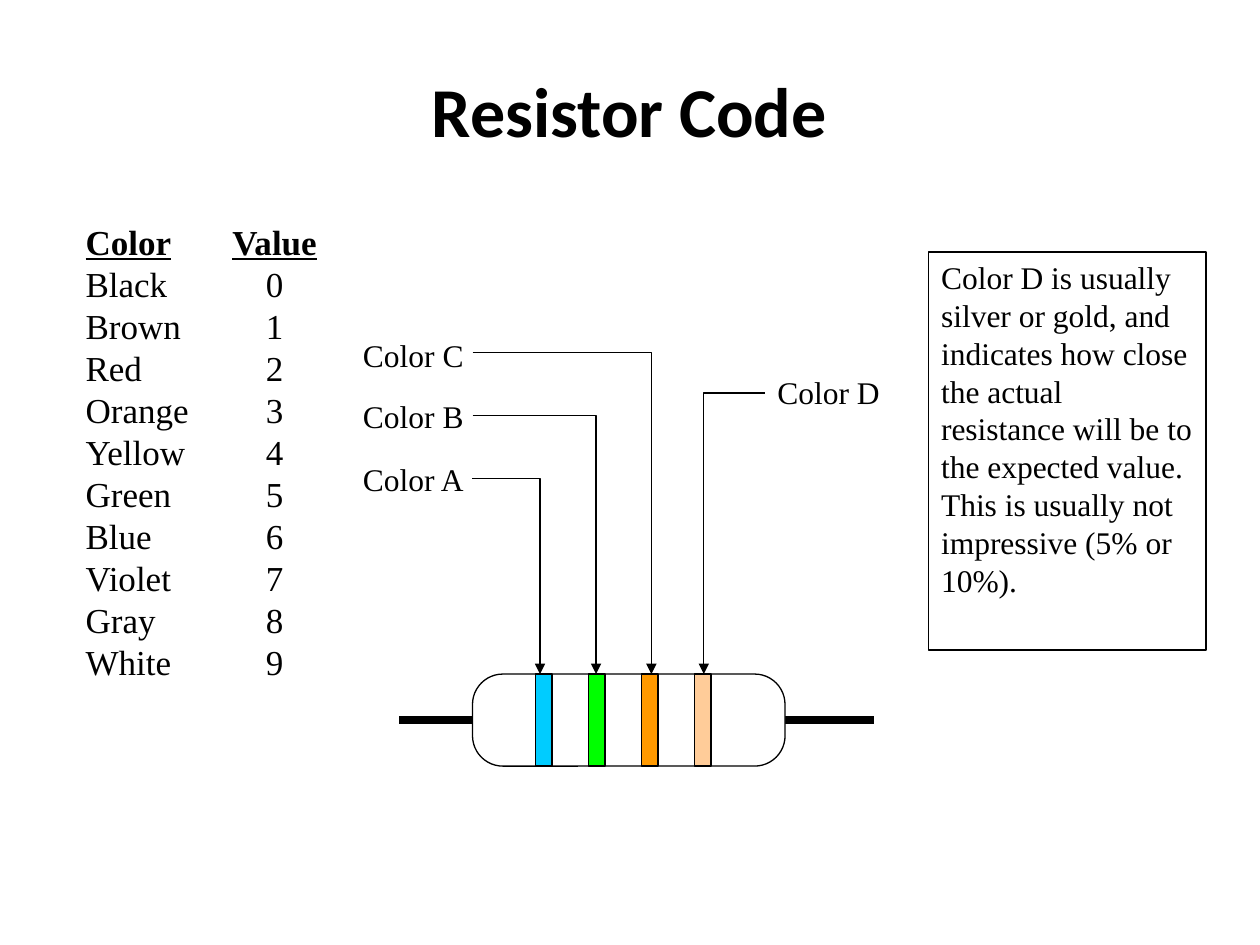
"""Build the resistor colour code slide."""
from lxml.etree import SubElement
from pptx import Presentation
from pptx.dml.color import RGBColor
from pptx.enum.shapes import MSO_CONNECTOR as Connector, MSO_SHAPE as Shape
from pptx.enum.text import MSO_ANCHOR as Anchor, MSO_AUTO_SIZE as AutoSize, PP_ALIGN as Align
from pptx.oxml.ns import qn
from pptx.util import Pt

THEME = {
    "ink": "000000", "paper": "FFFFFF",
    "title_font": "Calibri", "body_font": "Times New Roman",
    "title_size": 40, "table_size": 20, "label_size": 18,
    "thin": 0.75, "lead": 4.5,
}
TITLE = "Resistor Code"
HEADER = ("Color", "Value")
COLORS = ["Black", "Brown", "Red", "Orange", "Yellow",
          "Green", "Blue", "Violet", "Gray", "White"]
NOTE = ("Color D is usually silver or gold, and indicates how close the actual "
        "resistance will be to the expected value. This is usually not "
        "impressive (5% or 10%).")
BANDS = [
    {"label": "Color A", "fill": "00CCFF", "label_at": (207.4, 262.8), "start": (270, 273.6), "tip": 308.6},
    {"label": "Color B", "fill": "00FF00", "label_at": (207.4, 226.8), "start": (270, 237.6), "tip": 340.6},
    {"label": "Color C", "fill": "FF9900", "label_at": (207.4, 192.2), "start": (270, 201.6), "tip": 372.2},
    {"label": "Color D", "fill": "FFCC99", "label_at": (444.2, 213.1), "start": (437, 224.6), "tip": 402.2},
]
BODY_LEFT, BODY_TOP, BODY_WIDTH, BODY_HEIGHT = 270, 385.2, 178.6, 52.6
BAND_LEFT, BAND_STEP, BAND_WIDTH = 306, 30.3, 9.4
LEAD_LEFT, LEAD_RIGHT, LEAD_Y = 228.3, 499.7, 411.2
TAB_STOP = 108


def rgb(name):
    return RGBColor.from_string(THEME.get(name, name))


def add_span(para, text, size, font="body_font", bold=False, underline=False):
    span = para.add_run()
    span.text = text
    span.font.name = THEME[font]
    span.font.size = Pt(THEME[size])
    span.font.color.rgb = rgb("ink")
    span.font.bold = bold
    span.font.underline = underline


def set_line(shape, width="thin"):
    shape.line.color.rgb = rgb("ink")
    shape.line.width = Pt(THEME[width])


def add_block(slide, kind, left, top, width, height, fill="paper"):
    block = slide.shapes.add_shape(kind, Pt(left), Pt(top), Pt(width), Pt(height))
    block.shadow.inherit = False
    block.fill.solid()
    block.fill.fore_color.rgb = rgb(fill)
    set_line(block)
    return block


def add_box(slide, left, top, width, height):
    box = slide.shapes.add_textbox(Pt(left), Pt(top), Pt(width), Pt(height))
    box.text_frame.word_wrap = True
    return box.text_frame


def add_title(slide):
    title = slide.shapes.title
    title.left, title.top, title.width, title.height = Pt(212.4), Pt(34.6), Pt(294.5), Pt(55.4)
    frame = title.text_frame
    frame.auto_size = AutoSize.NONE
    frame.vertical_anchor = Anchor.MIDDLE
    para = frame.paragraphs[0]
    para.alignment = Align.CENTER
    add_span(para, TITLE, "title_size", "title_font", bold=True)


def add_code_list(slide):
    frame = add_box(slide, 41.8, 122.4, 159, 280)
    for index, row in enumerate([HEADER, *zip(COLORS, map(str, range(10)))]):
        para = frame.add_paragraph() if index else frame.paragraphs[0]
        stops = SubElement(para._p.get_or_add_pPr(), qn("a:tabLst"))
        SubElement(stops, qn("a:tab"), pos=str(Pt(TAB_STOP)), algn="ctr")
        heading = row is HEADER
        add_span(para, row[0], "table_size", bold=heading, underline=heading)
        add_span(para, "\t", "table_size")
        add_span(para, row[1], "table_size", bold=heading, underline=heading)


def add_resistor(slide):
    lead = slide.shapes.add_connector(
        Connector.STRAIGHT, Pt(LEAD_LEFT), Pt(LEAD_Y), Pt(LEAD_RIGHT), Pt(LEAD_Y))
    set_line(lead, "lead")
    SubElement(lead._element.spPr, qn("a:effectLst"))
    body = add_block(slide, Shape.ROUNDED_RECTANGLE, BODY_LEFT, BODY_TOP, BODY_WIDTH, BODY_HEIGHT)
    body.adjustments[0] = 0.33
    for index, band in enumerate(BANDS):
        add_block(slide, Shape.RECTANGLE, BAND_LEFT + index * BAND_STEP, BODY_TOP,
                  BAND_WIDTH, BODY_HEIGHT, band["fill"])


def add_pointer(slide, band):
    left, top = band["label_at"]
    frame = add_box(slide, left, top, 68, 22)
    frame.margin_left = frame.margin_top = frame.margin_right = frame.margin_bottom = 0
    add_span(frame.paragraphs[0], band["label"], "label_size")

    x, y = band["start"]
    builder = slide.shapes.build_freeform(Pt(x), Pt(y))
    corners = [(Pt(band["tip"]), Pt(y)), (Pt(band["tip"]), Pt(BODY_TOP))]
    builder.add_line_segments(corners, close=False)
    arrow = builder.convert_to_shape()
    arrow.shadow.inherit = False
    arrow.fill.background()
    set_line(arrow)
    SubElement(arrow.line._get_or_add_ln(), qn("a:tailEnd"), type="triangle", w="med", len="med")


def add_note(slide):
    note = add_block(slide, Shape.RECTANGLE, 530.7, 144, 158.5, 227.5)
    frame = note.text_frame
    frame.word_wrap = True
    frame.vertical_anchor = Anchor.TOP
    para = frame.paragraphs[0]
    para.alignment = Align.LEFT
    add_span(para, NOTE, "label_size")


def main():
    deck = Presentation()
    deck.slide_width, deck.slide_height = Pt(720), Pt(540)
    slide = deck.slides.add_slide(deck.slide_layouts[5])
    add_title(slide)
    add_resistor(slide)
    add_code_list(slide)
    for band in BANDS:
        add_pointer(slide, band)
    add_note(slide)
    deck.save("out.pptx")


if __name__ == "__main__":
    main()
